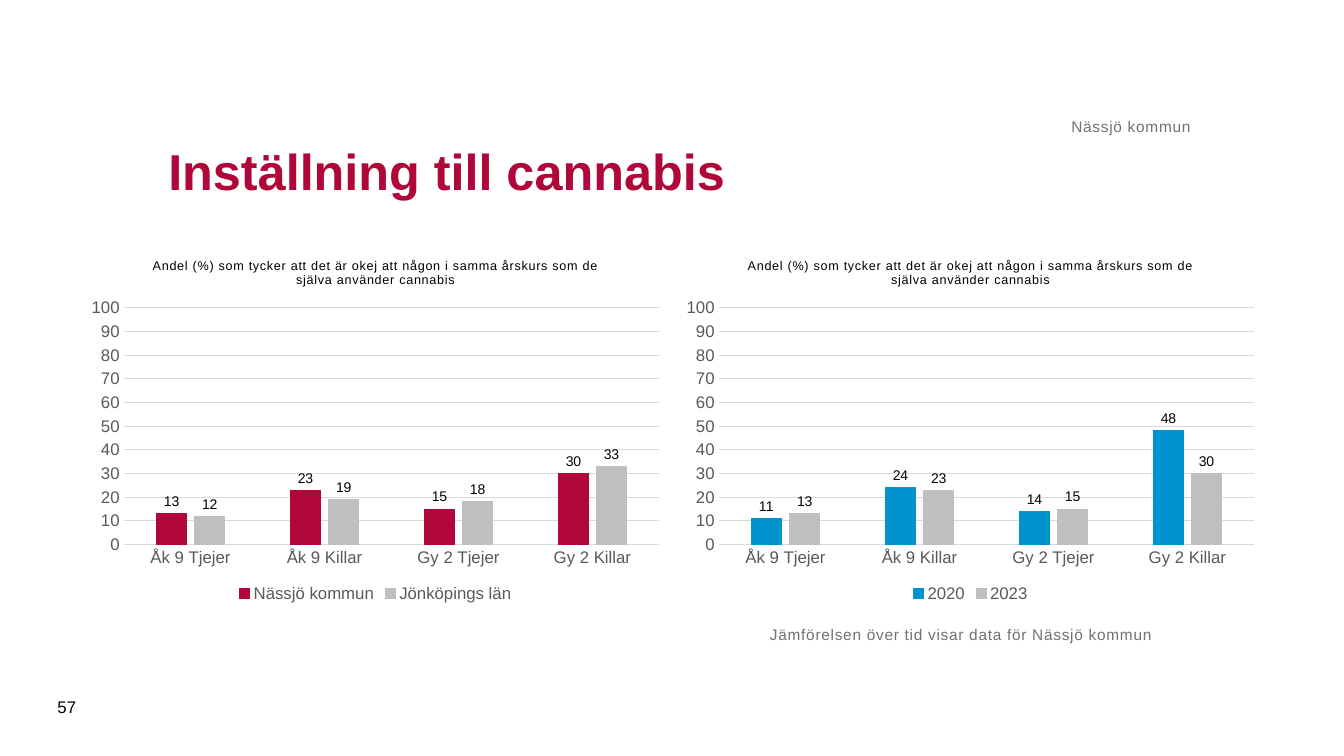
from pptx import Presentation
from pptx.chart.data import CategoryChartData
from pptx.dml.color import RGBColor
from pptx.enum.chart import XL_CHART_TYPE, XL_LABEL_POSITION, XL_LEGEND_POSITION, XL_TICK_MARK
from pptx.enum.text import MSO_ANCHOR, PP_ALIGN
from pptx.util import Pt

CRIMSON = RGBColor(0xB1, 0x06, 0x3A)
BLUE = RGBColor(0x00, 0x93, 0xD0)
SILVER = RGBColor(0xBF, 0xBF, 0xBF)
GRID_GRAY = RGBColor(0xD9, 0xD9, 0xD9)
AXIS_GRAY = RGBColor(0x59, 0x59, 0x59)
NOTE_GRAY = RGBColor(0x71, 0x71, 0x71)
BLACK = RGBColor(0x00, 0x00, 0x00)

NUMBER_FORMAT = "#,##0;#,##0"
CATEGORIES = ["Åk 9 Tjejer", "Åk 9 Killar", "Gy 2 Tjejer", "Gy 2 Killar"]
QUESTION = ("Andel (%) som tycker att det är okej att någon i samma årskurs "
            "som de själva använder cannabis")
MUNICIPALITY_2023 = [13, 23, 15, 30]
COUNTY_SERIES = [("Nässjö kommun", MUNICIPALITY_2023, CRIMSON),
                 ("Jönköpings län", [12, 19, 18, 33], SILVER)]
YEAR_SERIES = [("2020", [11, 24, 14, 48], BLUE),
               ("2023", MUNICIPALITY_2023, SILVER)]


def format_font(font, size, color, bold=False):
    values = {"name": "Arial", "size": Pt(size), "bold": bold}
    for name, value in values.items():
        setattr(font, name, value)
    font.color.rgb = color


def write_text(text_frame, text, size, color, bold=False, spacing=0):
    paragraph = text_frame.paragraphs[0]
    run = paragraph.add_run()
    run.text = text
    format_font(run.font, size, color, bold)
    if spacing:
        run._r.get_or_add_rPr().set("spc", str(spacing))
    return paragraph


def place_title(slide, box, text):
    title = slide.shapes.title
    for name, value in zip(("left", "top", "width", "height"), box):
        setattr(title, name, Pt(value))
    title.text_frame.vertical_anchor = MSO_ANCHOR.MIDDLE
    paragraph = write_text(title.text_frame, text, 36, CRIMSON, bold=True)
    paragraph.alignment = PP_ALIGN.LEFT


def add_note(slide, box, text, anchor=MSO_ANCHOR.TOP, alignment=PP_ALIGN.LEFT):
    frame = slide.shapes.add_textbox(*map(Pt, box)).text_frame
    values = {"word_wrap": True, "vertical_anchor": anchor, "margin_left": 0,
              "margin_top": 0, "margin_right": 0, "margin_bottom": 0}
    for name, value in values.items():
        setattr(frame, name, value)
    write_text(frame, text, 11, NOTE_GRAY, spacing=50).alignment = alignment


def add_page_number(slide, box, number):
    frame = slide.shapes.add_textbox(*map(Pt, box)).text_frame
    frame.word_wrap = True
    frame.vertical_anchor = MSO_ANCHOR.MIDDLE
    write_text(frame, number, 12, BLACK)


def format_line(line, color):
    line.color.rgb = color
    line.width = Pt(0.75)


def add_column_chart(slide, box, series_list):
    data = CategoryChartData(number_format=NUMBER_FORMAT)
    data.categories = CATEGORIES
    for name, values, _ in series_list:
        data.add_series(name, values)
    chart = slide.shapes.add_chart(
        XL_CHART_TYPE.COLUMN_CLUSTERED, *map(Pt, box), data).chart
    format_font(chart.font, 10, BLACK)

    # Heading and legend
    chart.has_title = True
    write_text(chart.chart_title.text_frame, QUESTION, 9, BLACK, spacing=50)
    chart.chart_title.include_in_layout = False
    chart.has_legend = True
    chart.legend.position = XL_LEGEND_POSITION.BOTTOM
    chart.legend.include_in_layout = False
    format_font(chart.legend.font, 12, AXIS_GRAY)

    # Axes
    for axis in (chart.category_axis, chart.value_axis):
        axis.major_tick_mark = XL_TICK_MARK.NONE
        axis.minor_tick_mark = XL_TICK_MARK.NONE
        format_font(axis.tick_labels.font, 12, AXIS_GRAY)
    format_line(chart.category_axis.format.line, GRID_GRAY)
    value_axis = chart.value_axis
    scale = {"minimum_scale": 0, "maximum_scale": 100, "major_unit": 10}
    for name, value in scale.items():
        setattr(value_axis, name, value)
    value_axis.format.line.fill.background()
    format_line(value_axis.major_gridlines.format.line, GRID_GRAY)
    value_axis.tick_labels.number_format = NUMBER_FORMAT
    value_axis.tick_labels.number_format_is_linked = False

    # Columns and their labels
    plot = chart.plots[0]
    for name, value in {"gap_width": 219, "overlap": -27,
                        "vary_by_categories": False}.items():
        setattr(plot, name, value)
    for series, (_, _, color) in zip(plot.series, series_list):
        series.format.fill.solid()
        series.format.fill.fore_color.rgb = color
        format_line(series.format.line, color)
        labels = series.data_labels
        label_values = {"show_value": True, "number_format": NUMBER_FORMAT,
                        "number_format_is_linked": False,
                        "position": XL_LABEL_POSITION.OUTSIDE_END}
        for name, value in label_values.items():
            setattr(labels, name, value)
        format_font(labels.font, 10, BLACK)


def build_comparison_slide(presentation):
    slide = presentation.slides.add_slide(presentation.slide_layouts[5])
    # Charts side by side
    left, top, width, height, gap = 57, 173, 422.5, 260.5, 2.5
    for index, series_list in enumerate((COUNTY_SERIES, YEAR_SERIES)):
        box = (left + index * (width + gap), top, width, height)
        add_column_chart(slide, box, series_list)
    # Heading, notes and page number
    place_title(slide, (113, 70.5, 737.5, 102), "Inställning till cannabis")
    add_note(slide, (550, 446.5, 382.5, 67.5),
             "Jämförelsen över tid visar data för Nässjö kommun")
    add_note(slide, (113, 44.5, 737.5, 52.5), "Nässjö kommun",
             MSO_ANCHOR.BOTTOM, PP_ALIGN.RIGHT)
    add_page_number(slide, (34, 490.5, 41, 29), "57")


def main():
    presentation = Presentation()
    presentation.slide_width = Pt(960)
    presentation.slide_height = Pt(540)
    build_comparison_slide(presentation)
    presentation.save("out.pptx")


if __name__ == "__main__":
    main()
